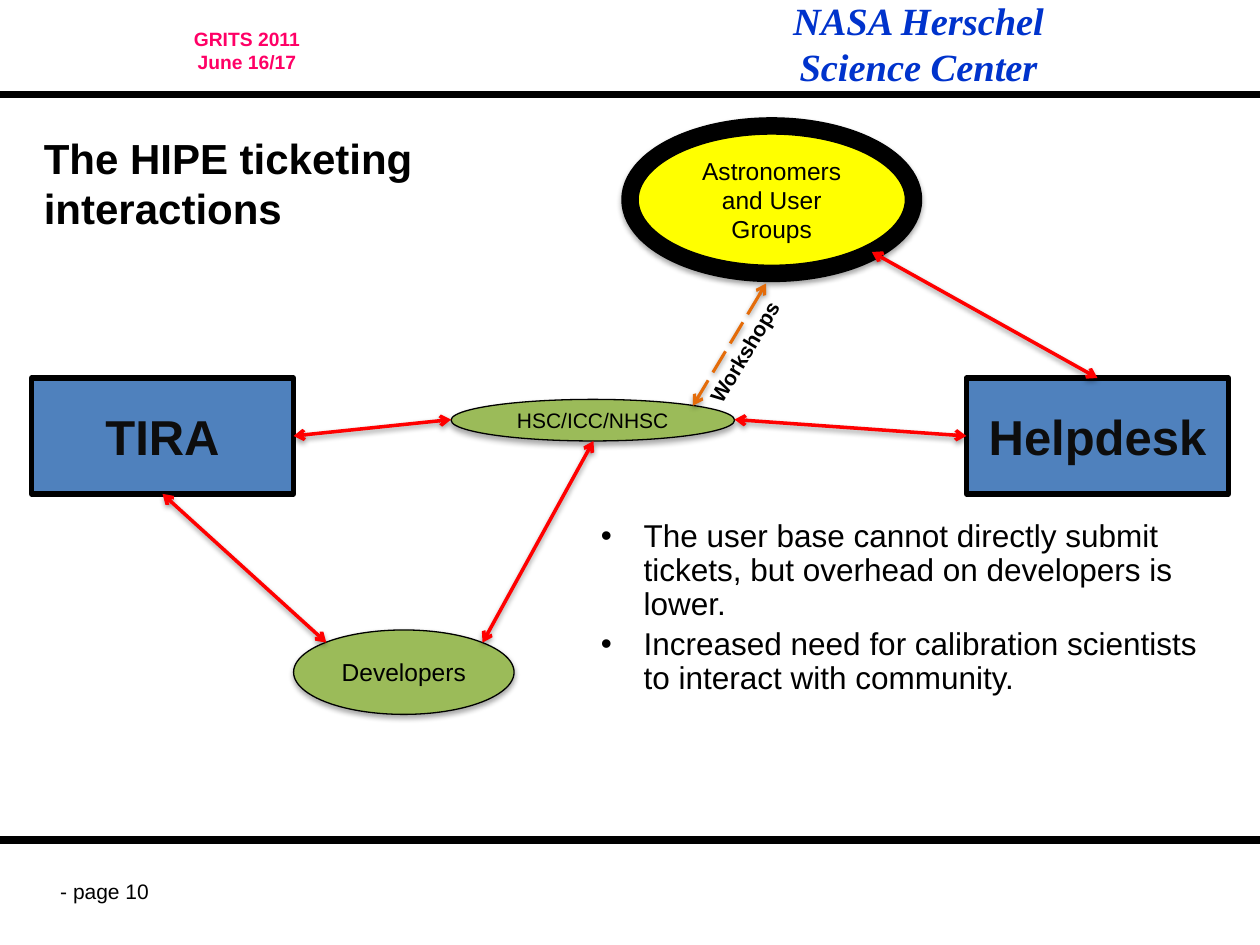
from dataclasses import dataclass
from lxml.etree import SubElement
from pptx import Presentation
from pptx.dml.color import RGBColor
from pptx.enum.dml import MSO_LINE
from pptx.enum.shapes import MSO_CONNECTOR, MSO_SHAPE
from pptx.enum.text import MSO_ANCHOR, PP_ALIGN
from pptx.oxml.ns import qn
from pptx.util import Inches, Pt


@dataclass(frozen=True)
class Style:
    size: float
    color: str = "000000"
    bold: bool = False
    italic: bool = False
    font: str = "Arial"


THEME = {
    "page": Style(12),
    "event": Style(11, "FF0066", bold=True),
    "center": Style(22, "0033CC", bold=True, italic=True, font="Times New Roman"),
    "title": Style(24, bold=True),
    "system": Style(28, "0D0D0D", bold=True),
    "group": Style(14),
    "small group": Style(12),
    "label": Style(12, bold=True),
    "bullet": Style(18),
    "black": "000000",
    "blue": "4F81BD",
    "green": "9BBB59",
    "yellow": "FFFF00",
    "red": "FF0000",
    "orange": "E46C0A",
}

LEFT, CENTER = PP_ALIGN.LEFT, PP_ALIGN.CENTER
TOP, MIDDLE = MSO_ANCHOR.TOP, MSO_ANCHOR.MIDDLE
RECTANGLE, OVAL = MSO_SHAPE.RECTANGLE, MSO_SHAPE.OVAL

TEXTS = [
    (["- page 10"], (0.38, 6.92, 1, 0.35), "page", LEFT),
    (["GRITS 2011", "June 16/17"], (-0.08, 0.17, 4.08, 0.5), "event", CENTER),
    (["NASA Herschel", "Science Center"], (4.58, -0.07, 5.42, 0.84), "center", CENTER),
    (["The HIPE ticketing interactions"], (0.25, 1, 3.67, 1), "title", LEFT),
]
RULES = [0.75, 6.67]
NODES = [
    ("TIRA", RECTANGLE, (0.25, 3, 2.08, 0.92), "blue", 3, "system"),
    ("Helpdesk", RECTANGLE, (7.67, 3, 2.08, 0.92), "blue", 3, "system"),
    ("HSC/ICC/NHSC", OVAL, (3.58, 3.17, 2.25, 0.33), "green", 0.75, "small group"),
    ("Astronomers and User Groups", OVAL, (5, 1, 2.25, 1.17), "yellow", 10, "group"),
    ("Developers", OVAL, (2.33, 5, 1.75, 0.67), "green", 0.75, "group"),
]
LINKS = [
    ((6.92, 2), (8.71, 3), None, ("Helpdesk", 0)),
    ((2.33, 3.46), (3.58, 3.33), ("TIRA", 3), None),
    ((3.83, 5.1), (4.71, 3.5), None, None),
    ((1.29, 3.92), (2.59, 5.1), ("TIRA", 2), None),
    ((5.83, 3.33), (7.67, 3.46), None, ("Helpdesk", 1)),
]
WORKSHOP_LINK = ((6.08, 2.25), (5.5, 3.22))
BULLETS = [
    "The user base cannot directly submit tickets, but overhead on developers is lower.",
    "Increased need for calibration scientists to interact with community.",
]


def rgb(name):
    return RGBColor.from_string(THEME[name])


def write(box, lines, style_name, align=CENTER, anchor=MIDDLE, wrap=True):
    style, frame = THEME[style_name], box.text_frame
    frame.text = "\n".join(lines)
    frame.word_wrap, frame.vertical_anchor = wrap, anchor
    for para in frame.paragraphs:
        para.alignment = align
        for span in para.runs:
            font = span.font
            font.name, font.size = style.font, Pt(style.size)
            font.bold, font.italic = style.bold, style.italic
            font.color.rgb = RGBColor.from_string(style.color)


def add_text(page, lines, place, style_name, align=LEFT, wrap=True):
    box = page.shapes.add_textbox(*map(Inches, place))
    write(box, lines, style_name, align, TOP, wrap)
    return box


def cast_shadow(effects, distance, opacity):
    shadow = SubElement(effects, qn("a:outerShdw"), blurRad="40000", dist=str(distance),
                        dir="5400000", rotWithShape="0")
    color = SubElement(shadow, qn("a:srgbClr"), val=THEME["black"])
    SubElement(color, qn("a:alpha"), val=str(opacity * 1000))


def add_node(page, label, kind, place, fill, weight, style_name):
    node = page.shapes.add_shape(kind, *map(Inches, place))
    node.fill.solid()
    node.fill.fore_color.rgb = rgb(fill)
    node.line.color.rgb, node.line.width = rgb("black"), Pt(weight)
    node.shadow.inherit = False
    if kind == OVAL:
        cast_shadow(node.element.spPr.find(qn("a:effectLst")), 23000, 35)
    write(node, [label], style_name)
    return node


def add_line(page, start, end, color, weight):
    line = page.shapes.add_connector(MSO_CONNECTOR.STRAIGHT, *map(Inches, start + end))
    line.line.color.rgb, line.line.width = rgb(color), Pt(weight)
    return line, SubElement(line.element.spPr, qn("a:effectLst"))


def add_link(page, start, end, color="red", weight=2, dash=None):
    link, effects = add_line(page, start, end, color, weight)
    if dash:
        link.line.dash_style = dash
    outline = link.element.spPr.find(qn("a:ln"))
    for tip in ("a:headEnd", "a:tailEnd"):
        SubElement(outline, qn(tip), type="arrow")
    cast_shadow(effects, 20000, 38)
    return link


def add_bullets(page):
    box = add_text(page, BULLETS, (4.67, 4.08, 5.08, 1.83), "bullet")
    for index, para in enumerate(box.text_frame.paragraphs):
        properties = para._p.get_or_add_pPr()
        properties.set("marL", str(Inches(0.34)))
        properties.set("indent", str(-Inches(0.34)))
        SubElement(properties, qn("a:buFont"), typeface=THEME["bullet"].font)
        SubElement(properties, qn("a:buChar"), char="•")
        para.line_spacing = 0.9
        if index:
            para.space_before = Pt(3.6)


def main():
    """Build the ticketing interactions slide."""
    deck = Presentation()
    deck.slide_width, deck.slide_height = Inches(10), Inches(7.5)
    page = deck.slides.add_slide(deck.slide_layouts[6])
    for text in TEXTS:
        add_text(page, *text)
    for height in RULES:
        add_line(page, (0, height), (10, height), "black", 4.5)
    nodes = {node[0]: add_node(page, *node) for node in NODES}
    for start, end, source, target in LINKS:
        link = add_link(page, start, end)
        if source:
            link.begin_connect(nodes[source[0]], source[1])
        if target:
            link.end_connect(nodes[target[0]], target[1])
    add_link(page, *WORKSHOP_LINK, "orange", 1.75, MSO_LINE.LONG_DASH)
    label = add_text(page, ["Workshops"], (5.35, 2.63, 1.13, 0.3), "label", wrap=False)
    label.rotation = 300.9
    add_bullets(page)
    deck.save("out.pptx")


if __name__ == "__main__":
    main()
